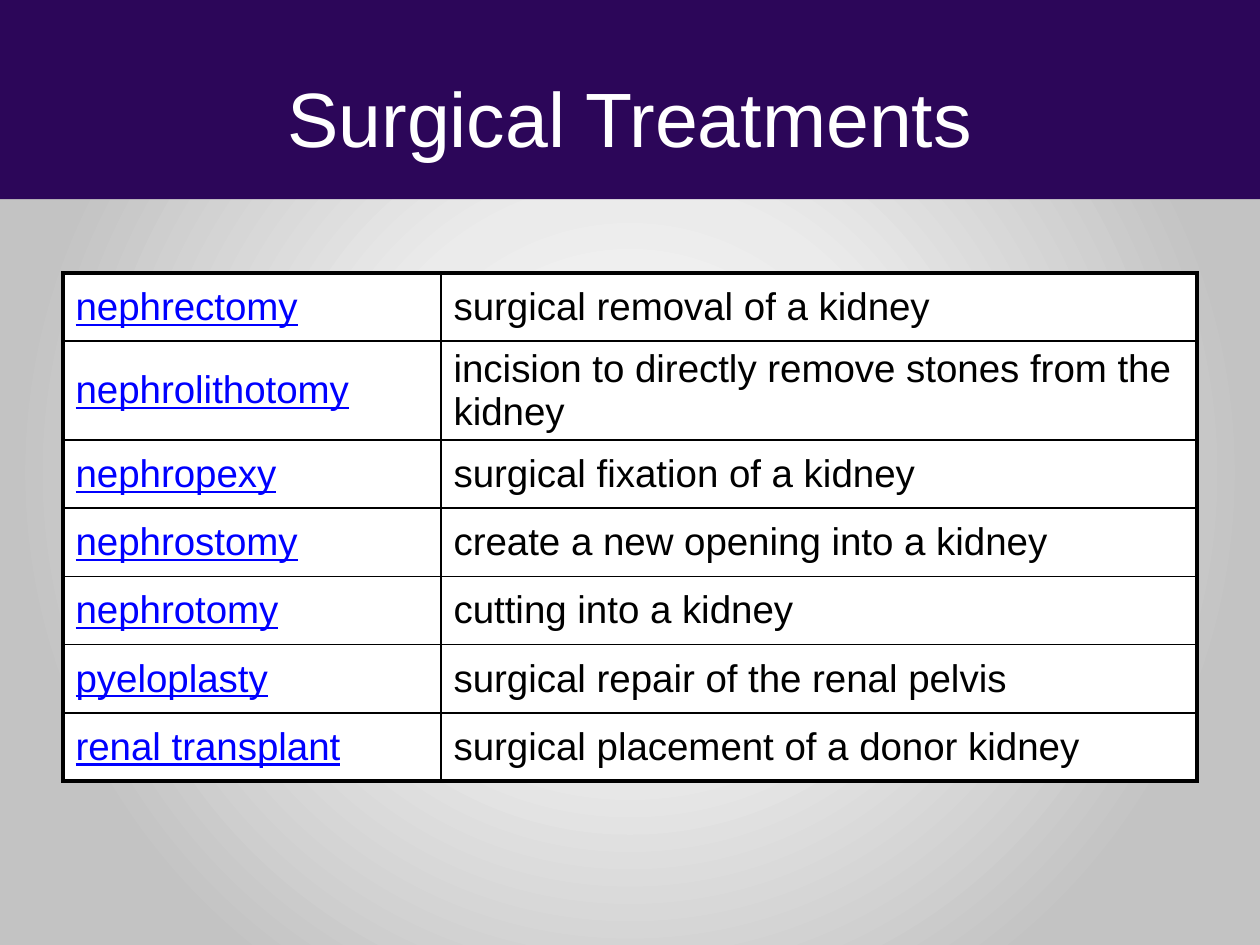
import pptx
import pptx.util
import pptx.dml.color
import pptx.enum.shapes
import pptx.enum.text
import pptx.oxml
import pptx.oxml.ns

Pt = pptx.util.Pt
MID = pptx.enum.text.MSO_ANCHOR.MIDDLE
INK = {"band": "2C0659", "white": "FFFFFF", "link": "0000FF", "text": "000000"}
STOPS = [(2, "FFFFFF"), (35, "EBEBEB"), (79, "C3C3C3")]
THICK, THIN = 2.25, 1
TERMS = [
    ("nephrectomy", "surgical removal of a kidney"),
    ("nephrolithotomy", "incision to directly remove stones from the kidney"),
    ("nephropexy", "surgical fixation of a kidney"),
    ("nephrostomy", "create a new opening into a kidney"),
    ("nephrotomy", "cutting into a kidney"),
    ("pyeloplasty", "surgical repair of the renal pelvis"),
    ("renal transplant", "surgical placement of a donor kidney"),
]


def color(name):
    return pptx.dml.color.RGBColor.from_string(INK[name])


def style(font, ink, **form):
    font.color.rgb = color(ink)
    for key, value in form.items():
        setattr(font, key, value)


def xml(text):
    return pptx.oxml.parse_xml(text.replace(">", f" {pptx.oxml.ns.nsdecls('a')}>", 1))


def backdrop(slide):
    """Fill the slide with a round gradient from its centre."""
    fill = slide.background.fill
    fill.solid()
    old = next(slide.element.iter(pptx.oxml.ns.qn("a:solidFill")))
    stops = "".join(
        f'<a:gs pos="{pos * 1000}"><a:srgbClr val="{tone}"/></a:gs>' for pos, tone in STOPS
    )
    old.getparent().replace(old, xml(
        f'<a:gradFill rotWithShape="1"><a:gsLst>{stops}</a:gsLst><a:path path="circle">'
        '<a:fillToRect l="50000" t="50000" r="50000" b="50000"/></a:path></a:gradFill>'
    ))


def header(slide, left, top, width, height):
    band = slide.shapes.add_shape(
        pptx.enum.shapes.MSO_SHAPE.RECTANGLE, Pt(left), Pt(top), Pt(width), Pt(height)
    )
    band.shadow.inherit = False
    band.fill.solid()
    band.fill.fore_color.rgb = color("band")
    band.line.fill.background()

    title = slide.shapes.title
    title.element.addprevious(band.element)
    place = {"left": left + 36, "top": top + 21.6, "width": width - 72, "height": 90}
    for key, value in place.items():
        setattr(title, key, Pt(value))
    frame = title.text_frame
    frame.text = "Surgical Treatments"
    frame.vertical_anchor = MID
    line = frame.paragraphs[0]
    line.alignment = pptx.enum.text.PP_ALIGN.CENTER
    style(line.runs[0].font, "white", name="Arial", size=Pt(44))


def border(cell, sides):
    """Draw the cell's edges; sides maps L, R, T, B, in this order, to widths."""
    props = cell._tc.get_or_add_tcPr()
    for spot, (side, size) in enumerate(sides.items()):
        props.insert(spot, xml(
            f'<a:ln{side} w="{Pt(size)}"><a:solidFill><a:srgbClr val="{INK["text"]}"/>'
            f'</a:solidFill></a:ln{side}>'
        ))


def glossary(slide, left, top, width, row):
    count = len(TERMS)
    table = slide.shapes.add_table(
        count, 2, Pt(left), Pt(top), Pt(width), Pt(row * count)
    ).table
    table.first_row = table.horz_banding = False
    for col, share in zip(table.columns, (1, 2)):
        col.width = Pt(width * share / 3)
    for r, pair in enumerate(TERMS):
        table.rows[r].height = Pt(row)
        for c, text in enumerate(pair):
            cell = table.cell(r, c)
            cell.text = text
            cell.vertical_anchor = MID
            cell.fill.solid()
            cell.fill.fore_color.rgb = color("white")
            style(
                cell.text_frame.paragraphs[0].runs[0].font,
                "text" if c else "link",
                name="Arial", size=Pt(22), underline=c == 0,
            )
            outer = {"L": c == 0, "R": c == 1, "T": r == 0, "B": r == count - 1}
            border(cell, {side: THICK if out else THIN for side, out in outer.items()})


def main():
    deck = pptx.Presentation()
    deck.slide_width, deck.slide_height = Pt(720), Pt(540)
    slide = deck.slides.add_slide(deck.slide_layouts.get_by_name("Title Only"))
    backdrop(slide)
    header(slide, 0, 0, 720, 113.75)
    glossary(slide, 36, 156, 648, 39)
    deck.save("out.pptx")


if __name__ == "__main__":
    main()
